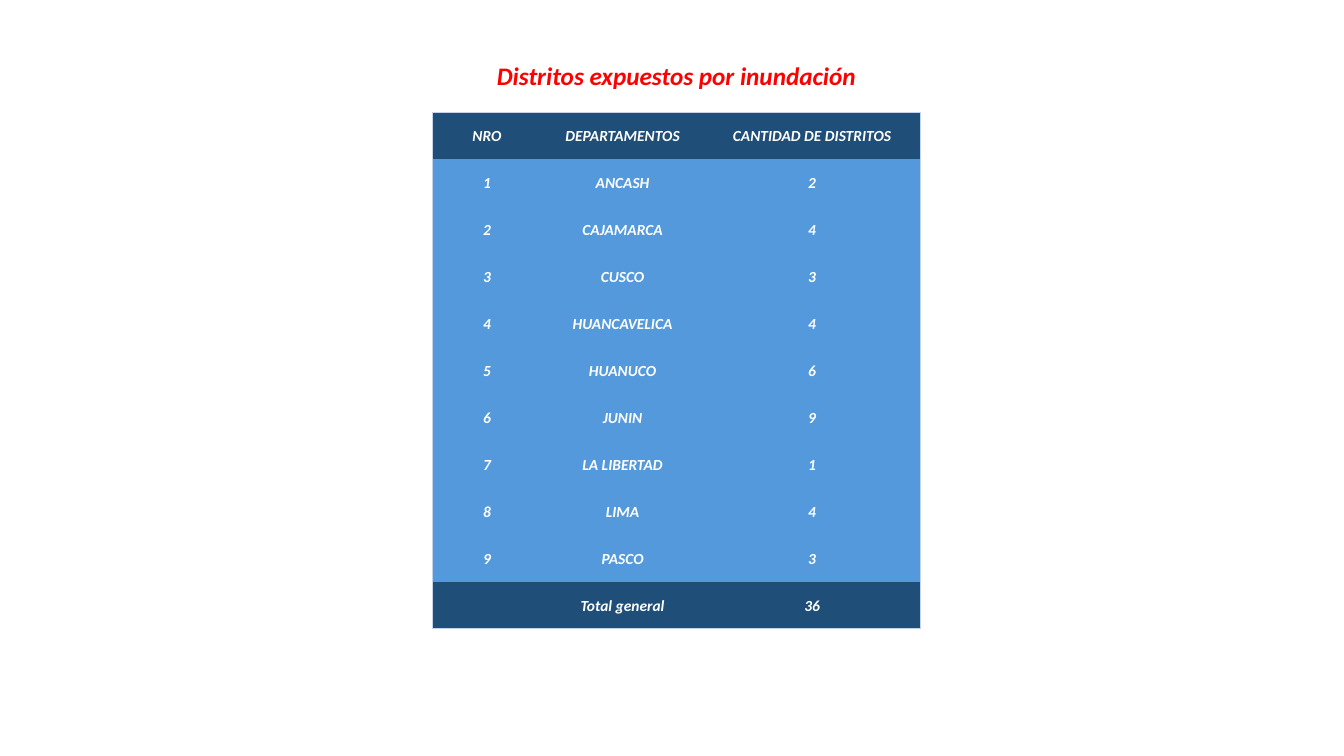
from lxml.etree import SubElement
from pptx import Presentation
from pptx.dml.color import RGBColor
from pptx.enum.text import MSO_ANCHOR, MSO_AUTO_SIZE, PP_ALIGN
from pptx.oxml.ns import qn
from pptx.util import Inches, Pt

COLORS = {"title": "FF0000", "text": "FFFFFF", "band": "1F4E79",
          "body": "5399DB", "border": "C4D5EB"}
NO_STYLE_NO_GRID = "{2D5ABB26-0587-4C30-8999-92F81FD0307C}"
DEPARTMENTS = [("ANCASH", 2), ("CAJAMARCA", 4), ("CUSCO", 3),
               ("HUANCAVELICA", 4), ("HUANUCO", 6), ("JUNIN", 9),
               ("LA LIBERTAD", 1), ("LIMA", 4), ("PASCO", 3)]
COLUMN_WIDTHS = [1.08, 1.61, 2.15]
ROW_HEIGHT = 5.13 / 11


def write(frame, text, size, color, font="Calibri"):
    paragraph = frame.paragraphs[0]
    paragraph.alignment = PP_ALIGN.CENTER
    run = paragraph.add_run()
    run.text = text
    run.font.name = font
    run.font.size = Pt(size)
    run.font.bold = run.font.italic = True
    run.font.color.rgb = RGBColor.from_string(COLORS[color])


def add_border(cell, side):
    """Draw one outer edge of a cell; side is L, R, T or B."""
    line = SubElement(cell._tc.get_or_add_tcPr(), qn(f"a:ln{side}"), w=str(Pt(0.5)))
    fill = SubElement(line, qn("a:solidFill"))
    SubElement(fill, qn("a:srgbClr"), val=COLORS["border"])


prs = Presentation()
prs.slide_width, prs.slide_height = Inches(13.33), Inches(7.5)
slide = prs.slides.add_slide(prs.slide_layouts[6])

title = slide.shapes.add_textbox(Inches(4.81), Inches(0.55), Inches(3.8), Inches(0.4)).text_frame
title.word_wrap = False
title.auto_size = MSO_AUTO_SIZE.SHAPE_TO_FIT_TEXT
write(title, "Distritos expuestos por inundación", size=18, color="title")

rows = [("NRO", "DEPARTAMENTOS", "CANTIDAD DE DISTRITOS")]
rows += [(number, *entry) for number, entry in enumerate(DEPARTMENTS, 1)]
rows.append(("", "Total general", sum(count for _, count in DEPARTMENTS)))
last_row, last_col = len(rows) - 1, len(COLUMN_WIDTHS) - 1

districts = slide.shapes.add_table(
    len(rows), len(COLUMN_WIDTHS), Inches(4.29), Inches(1.11),
    Inches(sum(COLUMN_WIDTHS)), Inches(ROW_HEIGHT * len(rows))).table
districts.horz_banding = False
districts._tbl.tblPr.find(qn("a:tableStyleId")).text = NO_STYLE_NO_GRID
for column, width in zip(districts.columns, COLUMN_WIDTHS):
    column.width = Inches(width)

for r, values in enumerate(rows):
    districts.rows[r].height = Inches(ROW_HEIGHT)
    for c, value in enumerate(values):
        cell = districts.cell(r, c)
        cell.vertical_anchor = MSO_ANCHOR.MIDDLE
        cell.margin_left = cell.margin_right = cell.margin_top = Inches(0.01)
        cell.margin_bottom = 0
        edges = {"L": c == 0, "R": c == last_col, "T": r == 0, "B": r == last_row}
        for side, is_outer in edges.items():
            if is_outer:
                add_border(cell, side)
        cell.fill.solid()
        shade = "band" if r in (0, last_row) else "body"
        cell.fill.fore_color.rgb = RGBColor.from_string(COLORS[shade])
        if value != "":
            write(cell.text_frame, str(value), size=11, color="text")

prs.save("out.pptx")
